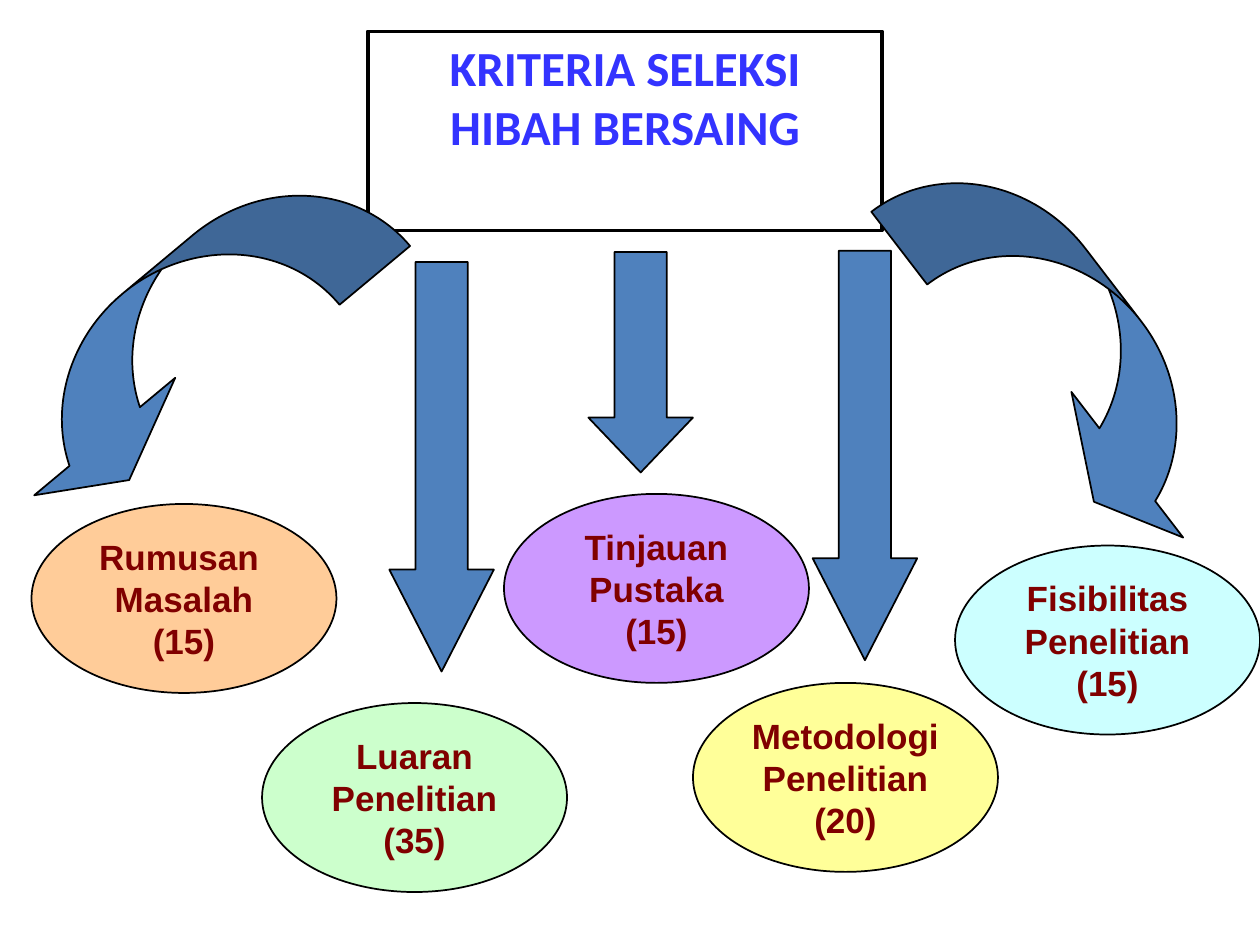
import dataclasses
import typing

import pptx
import pptx.dml.color
import pptx.enum.shapes
import pptx.enum.text
import pptx.oxml.ns
import pptx.util

Inches = pptx.util.Inches
Shapes = pptx.enum.shapes.MSO_SHAPE
Anchor = pptx.enum.text.MSO_ANCHOR

BLACK, ARROW_BLUE = "000000", "4F81BD"
TITLE_FONT = {"name": "Calibri", "size": pptx.util.Pt(28), "bold": True}
CRITERION_FONT = {"name": "Arial", "size": pptx.util.Pt(20), "bold": True}


@dataclasses.dataclass
class Criterion:
    lines: tuple[str, ...]
    left: float
    top: float
    fill: str


@dataclasses.dataclass
class Arrow:
    kind: typing.Any
    left: float
    top: float
    width: float
    height: float
    adjustments: tuple[float, ...]
    flip: str = ""
    rotation: float = 0


def straight_arrow(left: float, top: float, height: float) -> Arrow:
    """A downward arrow whose head grows with its length."""
    return Arrow(Shapes.UP_ARROW, left, top, 0.83, height, (0.5, 0.3 * height), "flipV")


def curved_arrow(left: float, top: float, rotation: float, flip: str = "") -> Arrow:
    bend = (0.622, 1.245, 0.333)
    return Arrow(Shapes.CURVED_UP_ARROW, left, top, 3.63, 1.17, bend, flip, rotation)


CRITERIA = [
    Criterion(("Rumusan ", "Masalah", "(15)"), 0.25, 4, "FFCC99"),
    Criterion(("Luaran", "Penelitian", "(35)"), 2.08, 5.58, "CCFFCC"),
    Criterion(("Tinjauan", "Pustaka", "(15)"), 4, 3.92, "CC99FF"),
    Criterion(("Metodologi", "Penelitian", "(20)"), 5.5, 5.42, "FFFF99"),
    Criterion(("Fisibilitas", "Penelitian", "(15)"), 7.58, 4.33, "CCFFFF"),
]

ARROWS = [
    curved_arrow(-0.33, 2.08, 140.2),
    straight_arrow(3.09, 2.08, 3.25),
    straight_arrow(6.45, 1.99, 3.25),
    curved_arrow(6.67, 2.18, 232.5, "flipH"),
    straight_arrow(4.67, 2, 1.75),
]


def color(value: str) -> pptx.dml.color.RGBColor:
    return pptx.dml.color.RGBColor.from_string(value)


def set_outline(shape, width: float) -> None:
    shape.line.color.rgb = color(BLACK)
    shape.line.width = pptx.util.Pt(width)


def write_lines(frame, lines: tuple[str, ...], font: dict, font_color: str) -> None:
    for index, line in enumerate(lines):
        para = frame.paragraphs[0] if index == 0 else frame.add_paragraph()
        para.alignment = pptx.enum.text.PP_ALIGN.CENTER
        span = para.add_run()
        span.text = line
        for name, value in font.items():
            setattr(span.font, name, value)
        span.font.color.rgb = color(font_color)


def add_filled_shape(page, kind, left: float, top: float, width: float,
                     height: float, fill: str):
    shape = page.shapes.add_shape(
        kind, Inches(left), Inches(top), Inches(width), Inches(height))
    shape.shadow.inherit = False
    shape.fill.solid()
    shape.fill.fore_color.rgb = color(fill)
    set_outline(shape, 1)
    return shape


def format_title(page, text: str) -> None:
    box = page.shapes.title
    place = {"left": 2.92, "top": 0.25, "width": 4.08, "height": 1.58}
    for name, value in place.items():
        setattr(box, name, Inches(value))
    set_outline(box, 2.25)
    frame = box.text_frame
    frame.word_wrap = True
    frame.auto_size = pptx.enum.text.MSO_AUTO_SIZE.NONE
    frame.vertical_anchor = Anchor.TOP
    write_lines(frame, (text,), TITLE_FONT, "3333FF")


def draw_criterion(page, item: Criterion) -> None:
    oval = add_filled_shape(page, Shapes.OVAL, item.left, item.top, 2.42, 1.5, item.fill)
    oval.text_frame.word_wrap = False
    oval.text_frame.vertical_anchor = Anchor.MIDDLE
    write_lines(oval.text_frame, item.lines, CRITERION_FONT, "800000")


def draw_arrow(page, item: Arrow) -> None:
    shape = add_filled_shape(
        page, item.kind, item.left, item.top, item.width, item.height, ARROW_BLUE)
    for index, value in enumerate(item.adjustments):
        shape.adjustments[index] = value
    shape.rotation = item.rotation
    if item.flip:
        transform = shape.element.spPr.find(pptx.oxml.ns.qn("a:xfrm"))
        transform.set(item.flip, "1")


def main() -> None:
    deck = pptx.Presentation()
    deck.slide_width, deck.slide_height = Inches(10), Inches(7.5)
    page = deck.slides.add_slide(deck.slide_layouts.get_by_name("Title Only"))

    # Framed heading
    format_title(page, "KRITERIA SELEKSI HIBAH BERSAING")

    # Weighted criteria
    for criterion in CRITERIA:
        draw_criterion(page, criterion)

    # Arrows from the heading to each criterion
    for arrow in ARROWS:
        draw_arrow(page, arrow)

    deck.save("out.pptx")


if __name__ == "__main__":
    main()
